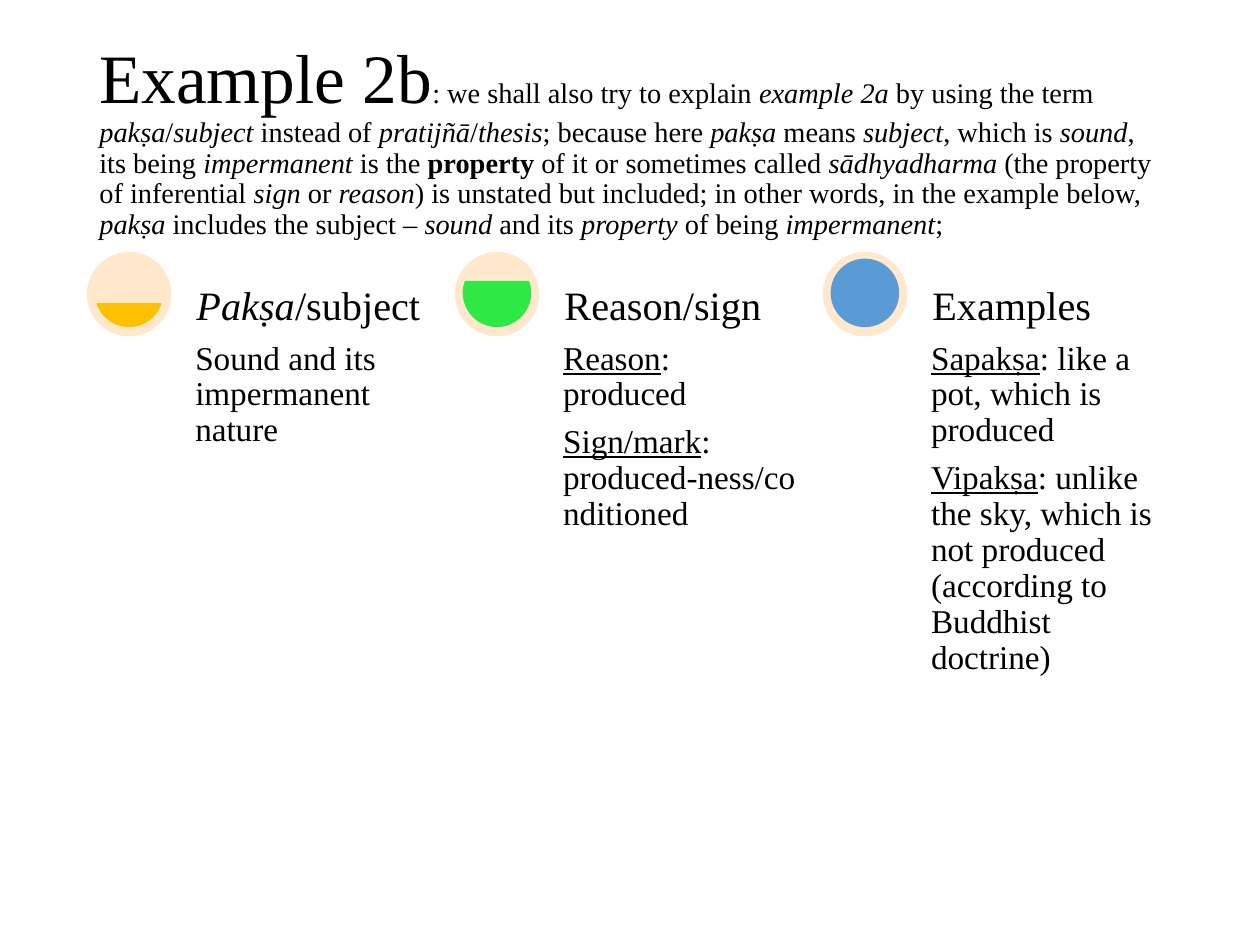
import pptx
import pptx.dml.color
import pptx.enum.shapes
import pptx.enum.text
import pptx.util
from dataclasses import dataclass

Inches = pptx.util.Inches
Shape = pptx.enum.shapes.MSO_SHAPE
Anchor = pptx.enum.text.MSO_ANCHOR


@dataclass(frozen=True)
class Theme:
    font: str = "Times New Roman"
    ink: str = "000000"
    ring: str = "FFE8CC"
    amber: str = "FFC000"
    green: str = "30E845"
    blue: str = "5B9BD5"
    title: float = 39.6
    intro: float = 16.2
    heading: float = 23
    body: float = 19


EMPHASIS = {"i": "italic", "b": "bold", "u": "underline"}


def rgb(value):
    return pptx.dml.color.RGBColor.from_string(value)


def set_all(target, values):
    for name, value in values.items():
        setattr(target, name, value)


class SlideBuilder:
    def __init__(self, page, theme):
        self.page = page
        self.theme = theme

    def spans(self, para, text, size):
        """Add marked text; the odd parts between bars begin with an EMPHASIS letter."""
        for index, part in enumerate(text.split("|")):
            if not part:
                continue
            marked = index % 2 == 1
            span = para.add_run()
            span.text = part[1:] if marked else part
            values = {"name": self.theme.font, "size": pptx.util.Pt(size)}
            if marked:
                values[EMPHASIS[part[0]]] = True
            set_all(span.font, values)
            span.font.color.rgb = rgb(self.theme.ink)

    def text(self, place, paragraphs, anchor=Anchor.TOP, inset=(0.1, 0.05), gap=0):
        """Add a text box; each paragraph is a list of (marked text, size)."""
        box = self.page.shapes.add_textbox(*map(Inches, place))
        frame = box.text_frame
        across, down = map(Inches, inset)
        set_all(frame, {
            "word_wrap": True, "vertical_anchor": anchor,
            "margin_left": across, "margin_right": across,
            "margin_top": down, "margin_bottom": down,
        })
        for index, pieces in enumerate(paragraphs):
            para = frame.add_paragraph() if index else frame.paragraphs[0]
            set_all(para, {"line_spacing": 0.9, "space_after": pptx.util.Pt(gap)})
            for text, size in pieces:
                self.spans(para, text, size)

    def shape(self, kind, place, color, outlined=False, angles=()):
        shape = self.page.shapes.add_shape(kind, *map(Inches, place))
        shape.shadow.inherit = False
        shape.fill.solid()
        shape.fill.fore_color.rgb = rgb(color)
        if outlined:
            shape.line.color.rgb = rgb(color)
            shape.line.width = pptx.util.Pt(1)
        else:
            shape.line.fill.background()
        for index, angle in enumerate(angles):
            shape.adjustments[index] = angle

    def column(self, left, color, angles, heading, paragraphs):
        """Add a partly filled disc with its heading and body text."""
        theme, top, disc, width = self.theme, 2, 0.67, 1.97
        text_left = left + 0.81
        self.shape(Shape.OVAL, (left, top, disc, disc), theme.ring)
        self.shape(Shape.CHORD, (left + 0.07, top + 0.06, 0.53, 0.53),
                   color, outlined=True, angles=angles)
        self.text((text_left, top + 0.66, width, 2.81),
                  [[(text, theme.body)] for text in paragraphs],
                  inset=(0.05, 0.05), gap=0.35 * theme.body)
        self.text((text_left, top, width, disc), [[(heading, theme.heading)]],
                  anchor=Anchor.BOTTOM, inset=(0.06, 0.06))


INTRO = (
    ": we shall also try to explain |iexample 2a |by using the term |ipakṣa|/|isubject| "
    "instead of |ipratijñā|/|ithesis|; because here |ipakṣa| means |isubject|, "
    "which is |isound|, its being |iimpermanent| is the |bproperty| of it or sometimes "
    "called |isādhyadharma |(the property of inferential |isign| or |ireason|) is unstated "
    "but included; in other words, in the example below, |ipakṣa| includes the subject – "
    "|isound| and its |iproperty| of being |iimpermanent|;"
)


def main():
    deck = pptx.Presentation()
    set_all(deck, {"slide_width": Inches(10), "slide_height": Inches(7.5)})
    theme = Theme()
    builder = SlideBuilder(deck.slides.add_slide(deck.slide_layouts[6]), theme)

    builder.text((0.69, 0.4, 8.62, 1.45),
                 [[("Example 2b", theme.title), (INTRO, theme.intro)]],
                 anchor=Anchor.MIDDLE)

    columns = [
        (theme.amber, (11.68, 96.32), "|iPakṣa|/subject",
         ["Sound and its impermanent nature"]),
        (theme.green, (204.32, 119.68), "Reason/sign",
         ["|uReason|: produced", "|uSign/mark|: produced-ness/conditioned"]),
        (theme.blue, (162, 162), "Examples",
         ["|uSapakṣa|: like a pot, which is produced",
          "|uVipakṣa|: unlike the sky, which is not produced "
          "(according to Buddhist doctrine)"]),
    ]
    for index, column in enumerate(columns):
        builder.column(0.69 + 2.92 * index, *column)

    deck.save("out.pptx")


if __name__ == "__main__":
    main()
